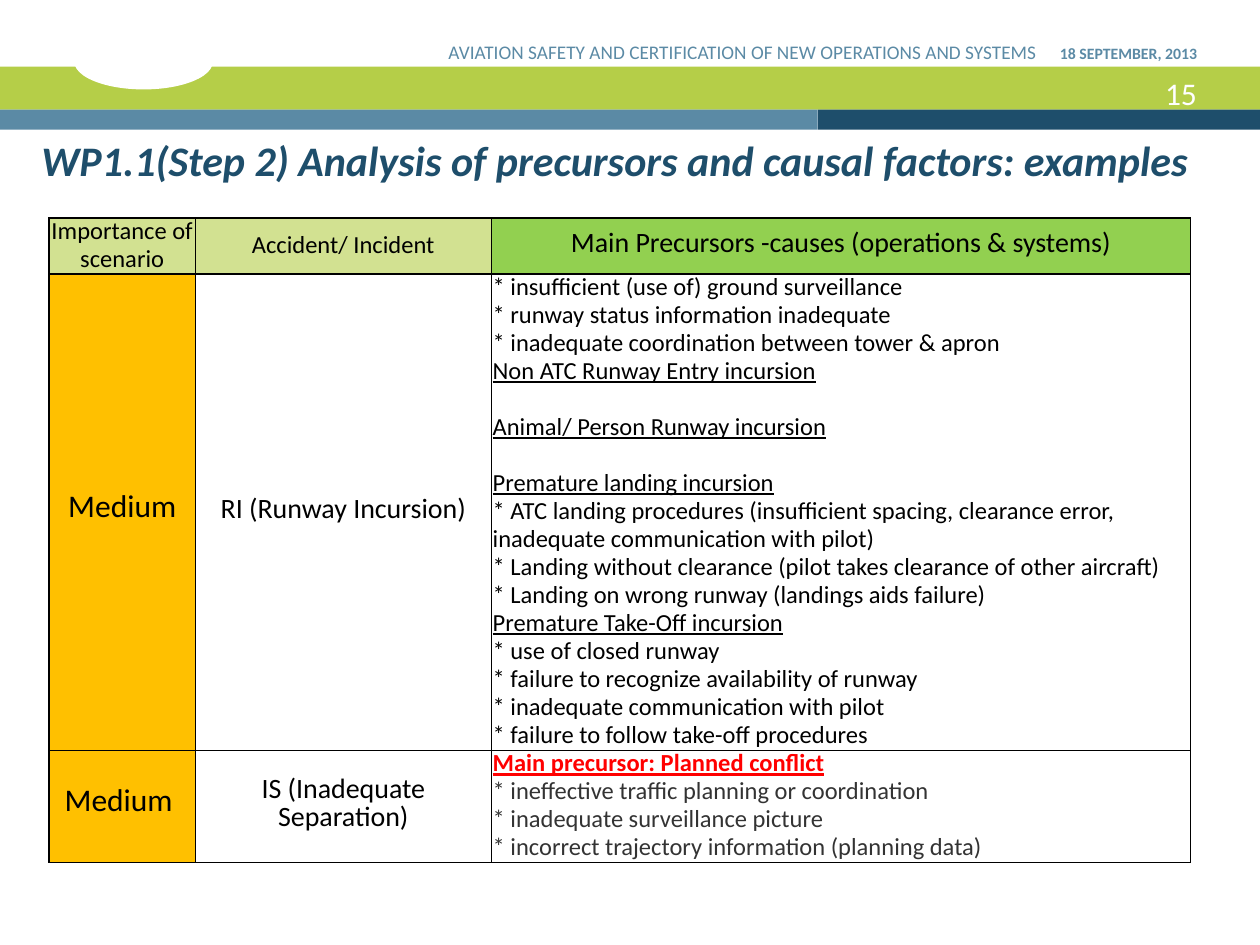
from lxml import etree
from pptx import Presentation
from pptx import util as u
from pptx.dml.color import RGBColor
from pptx.enum import shapes, text
from pptx.oxml import ns

LIME, NAVY, STEEL, WHITE = "B5CE48", "1E4E6B", "5B8AA5", "FFFFFF"
PALE, GREEN, AMBER = "D2E191", "92D050", "FFC000"
BLACK, RED, GREY = "000000", "FF0000", "333333"
LEFT, MID, RIGHT = text.PP_ALIGN.LEFT, text.PP_ALIGN.CENTER, text.PP_ALIGN.RIGHT


def tint(code):
    return RGBColor.from_string(code)


class Deck:
    """Holds the style and the current slide, and draws each kind of element."""

    face = "Calibri"
    lead = u.Pt(16)

    def __init__(self, wide, high):
        self.prs = Presentation()
        self.prs.slide_width, self.prs.slide_height = u.Inches(wide), u.Inches(high)
        self.slide = self.prs.slides.add_slide(self.prs.slide_layouts[6])

    def shape(self, kind, box, fill):
        item = self.slide.shapes.add_shape(kind, *map(u.Inches, box))
        item.shadow.inherit = False
        item.fill.solid()
        item.fill.fore_color.rgb = tint(fill)
        item.line.fill.background()

    def style(self, para, size, color, bold=False, italic=False, under=False, align=LEFT):
        para.alignment = align
        font = para.font
        font.name, font.size = self.face, u.Pt(size)
        font.bold, font.italic, font.underline = bold, italic, under
        font.color.rgb = tint(color)

    def label(self, box, words, size, color, inset=0, **look):
        frame = self.slide.shapes.add_textbox(*map(u.Inches, box)).text_frame
        frame.word_wrap = True
        frame.vertical_anchor = text.MSO_ANCHOR.BOTTOM
        frame.margin_right = u.Inches(inset)
        frame.text = words
        self.style(frame.paragraphs[0], size, color, **look)

    def grid(self, box, cols, rows):
        table = self.slide.shapes.add_table(len(rows), len(cols), *map(u.Inches, box)).table
        table.first_row = table.horz_banding = False
        for col, wide in zip(table.columns, cols):
            col.width = u.Inches(wide)
        for row, high in zip(table.rows, rows):
            row.height = u.Inches(high)
        return table

    def edge(self, cell):
        props = cell._tc.get_or_add_tcPr()
        for side in ("lnL", "lnR", "lnT", "lnB"):
            line = etree.SubElement(props, ns.qn(f"a:{side}"), w=str(u.Pt(1)))
            fill = etree.SubElement(line, ns.qn("a:solidFill"))
            etree.SubElement(fill, ns.qn("a:srgbClr"), val=BLACK)

    def cell(self, cell, lines, fill=None, anchor=text.MSO_ANCHOR.MIDDLE):
        self.edge(cell)
        if fill:
            cell.fill.solid()
            cell.fill.fore_color.rgb = tint(fill)
        else:
            cell.fill.background()
        cell.margin_left = cell.margin_right = u.Inches(0.01)
        cell.margin_top = cell.margin_bottom = 0
        cell.vertical_anchor = anchor
        frame = cell.text_frame
        frame.text = "\n".join(words for words, _ in lines)
        for para, (_, look) in zip(frame.paragraphs, lines):
            look = dict(look)
            para.line_spacing = self.lead
            para.space_before = self.lead if look.pop("gap", False) else 0
            self.style(para, **look)


ITEM = {"size": 14, "color": BLACK}
HEAD = {**ITEM, "under": True}
APART = {**HEAD, "gap": True}
MAIN = {**HEAD, "color": RED, "bold": True}
SOFT = {**ITEM, "color": GREY}

RUNWAY = [
    ("* insufficient (use of) ground surveillance", ITEM),
    ("* runway status information inadequate", ITEM),
    ("* inadequate coordination between tower & apron", ITEM),
    ("Non ATC Runway Entry incursion", HEAD),
    ("Animal/ Person Runway incursion", APART),
    ("Premature landing incursion", APART),
    ("* ATC landing procedures (insufficient spacing, clearance error, "
     "inadequate communication with pilot)", ITEM),
    ("* Landing without clearance (pilot takes clearance of other aircraft)", ITEM),
    ("* Landing on wrong runway (landings aids failure)", ITEM),
    ("Premature Take-Off incursion", HEAD),
    ("* use of closed runway", ITEM),
    ("* failure to recognize availability of runway", ITEM),
    ("* inadequate communication with pilot", ITEM),
    ("* failure to follow take-off procedures", ITEM),
]
SPACING = [
    ("Main precursor: Planned conflict", MAIN),
    ("* ineffective traffic planning or coordination", SOFT),
    ("* inadequate surveillance picture", SOFT),
    ("* incorrect trajectory information (planning data)", SOFT),
]
HEADS = [
    ("Importance of scenario", 14, PALE),
    ("Accident/ Incident", 14, PALE),
    ("Main Precursors -causes (operations & systems)", 16, GREEN),
]
CASES = [
    ("Medium", "RI (Runway Incursion)", RUNWAY),
    ("Medium ", "IS (Inadequate Separation)", SPACING),
]


def title(words, size):
    return [(words, {"size": size, "color": BLACK, "align": MID})]


def main():
    deck = Deck(10, 7.5)
    rect, oval = shapes.MSO_SHAPE.RECTANGLE, shapes.MSO_SHAPE.OVAL
    deck.shape(rect, (0, 0.53, 10, 0.34), LIME)
    deck.shape(rect, (6.49, 0.87, 3.51, 0.16), NAVY)
    deck.shape(rect, (0, 0.87, 6.49, 0.16), STEEL)
    deck.shape(oval, (0.59, 0.27, 1.1, 0.44), WHITE)

    deck.label((8.67, 0.54, 0.83, 0.4), "15", 18, WHITE, align=RIGHT)
    deck.label((8.31, 0.05, 1.19, 0.5), "18 SEPTEMBER, 2013", 9, STEEL, bold=True, align=RIGHT)
    deck.label((2.95, 0.05, 5.28, 0.5),
               "AVIATION SAFETY AND CERTIFICATION OF NEW OPERATIONS AND SYSTEMS",
               11, STEEL, align=RIGHT)

    table = deck.grid((0.39, 1.73, 9.06, 5.11), (1.16, 2.35, 5.55), (0.44, 3.78, 0.89))
    for col, (words, size, fill) in enumerate(HEADS):
        deck.cell(table.cell(0, col), title(words, size), fill)
    for row, (rank, event, causes) in enumerate(CASES, 1):
        deck.cell(table.cell(row, 0), title(rank, 18), AMBER)
        deck.cell(table.cell(row, 1), title(event, 16))
        deck.cell(table.cell(row, 2), causes, anchor=text.MSO_ANCHOR.TOP)

    deck.label((0.23, 0.35, 9.45, 1.17),
               "WP1.1(Step 2) Analysis of precursors and causal factors: examples",
               24, NAVY, inset=0.1, bold=True, italic=True)
    deck.prs.save("out.pptx")


if __name__ == "__main__":
    main()
